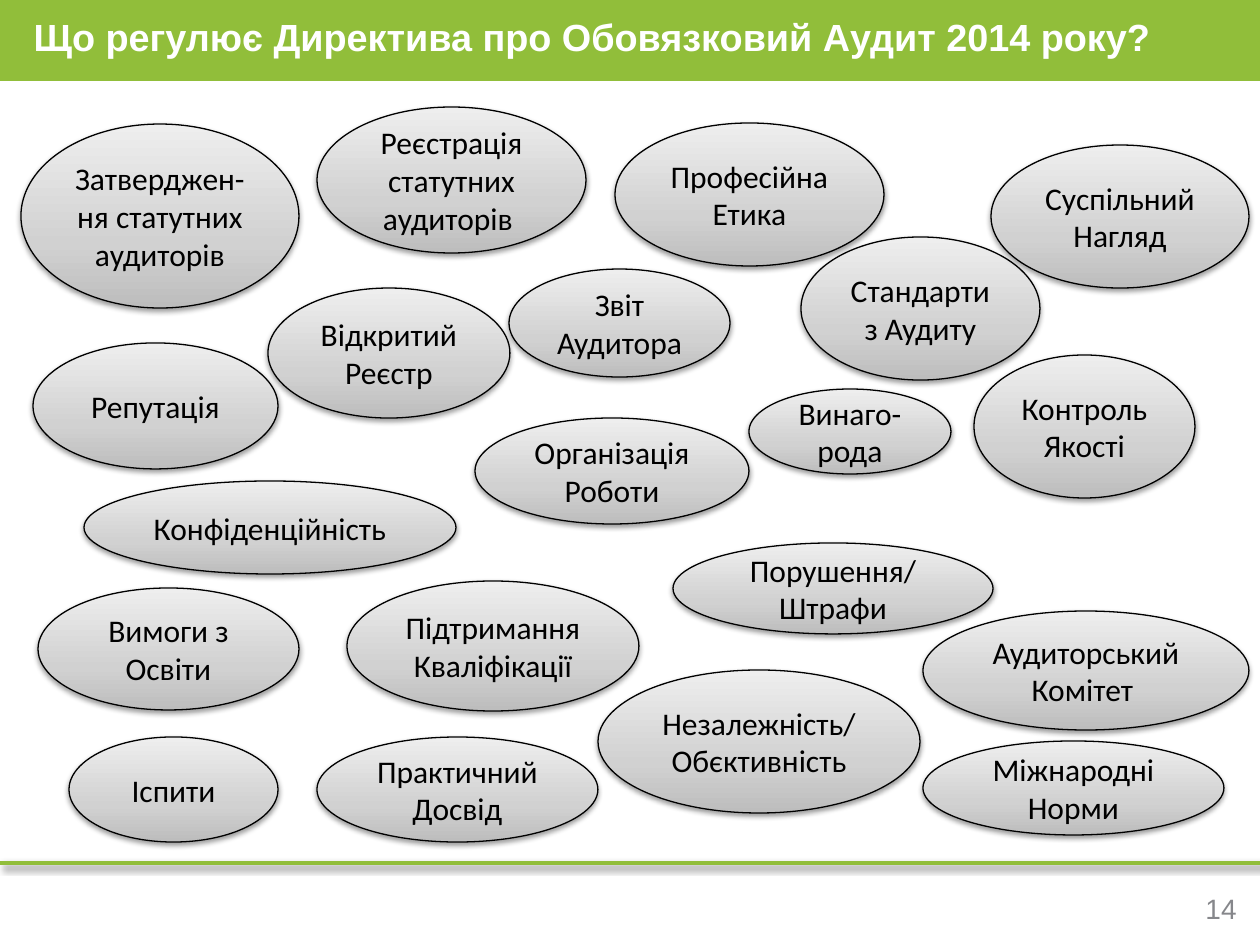
import pptx
import pptx.util
import pptx.dml.color
import pptx.enum.shapes
import pptx.enum.text
import pptx.oxml
import pptx.oxml.ns

PX = 914400 // 126
COLOR = {"green": "91BE3A", "white": "FFFFFF", "black": "000000", "gray": "86878B"}
GRAD = [(0, "BDBDBD"), (35, "D1D1D1"), (100, "EEEEEE")]
TITLE = "Що регулює Директива про Обовязковий Аудит 2014 року?"
NUMBER = "14"
# text, left, top, width, height
TOPICS = [
    ("Затверджен-ня статутних аудиторів", 21, 124, 278, 184),
    ("Вимоги з Освіти", 38, 588, 261, 122),
    ("Репутація", 33, 343, 245, 126),
    ("Іспити", 69, 737, 209, 105),
    ("Практичний Досвід", 317, 737, 281, 105),
    ("Підтримання Кваліфікації", 347, 581, 292, 130),
    ("Відкритий Реєстр", 268, 288, 242, 130),
    ("Реєстрація статутних аудиторів ", 317, 107, 269, 146),
    ("Професійна Етика", 615, 123, 269, 143),
    ("Незалежність/ Обєктивність", 598, 670, 322, 143),
    ("Конфіденційність", 84, 481, 372, 93),
    ("Організація Роботи", 475, 418, 274, 106),
    ("Винаго-рода", 749, 389, 202, 85),
    ("Стандарти з Аудиту", 801, 237, 239, 143),
    ("Звіт Аудитора", 509, 269, 221, 108),
    ("Контроль Якості", 974, 355, 221, 143),
    ("Порушення/ Штрафи", 673, 543, 320, 91),
    ("Суспільний Нагляд", 991, 145, 258, 143),
    ("Аудиторський Комітет ", 923, 611, 326, 119),
    ("Міжнародні Норми", 923, 741, 301, 94),
]

ALIGN = pptx.enum.text.PP_ALIGN
SHAPE = pptx.enum.shapes.MSO_SHAPE
NS = pptx.oxml.ns.nsdecls("a")


def rgb(name):
    return pptx.dml.color.RGBColor.from_string(COLOR[name])


def box(*px):
    return [n * PX for n in px]


def write(shape, text, size, font, color, align, bold=False):
    frame = shape.text_frame
    frame.word_wrap = True
    frame.auto_size = pptx.enum.text.MSO_AUTO_SIZE.NONE
    frame.vertical_anchor = pptx.enum.text.MSO_ANCHOR.MIDDLE
    para = frame.paragraphs[0]
    para.alignment = align
    run = para.add_run()
    run.text = text
    run.font.size = pptx.util.Pt(size)
    run.font.name = font
    run.font.bold = bold
    run.font.color.rgb = rgb(color)


def shade(shape, alpha, blur, dist, angle):
    """Give the shape an outer black shadow; blur and distance in points."""
    shape._element.spPr.append(pptx.oxml.parse_xml(
        f'<a:effectLst {NS}><a:outerShdw blurRad="{int(blur * 12700)}" '
        f'dist="{int(dist * 12700)}" dir="{angle * 60000}" rotWithShape="0">'
        f'<a:srgbClr val="{COLOR["black"]}"><a:alpha val="{alpha * 1000}"/>'
        '</a:srgbClr></a:outerShdw></a:effectLst>'))


def blend(shape):
    """Fill the shape with the grey gradient, dark at the bottom."""
    shape.fill.gradient()
    old = shape._element.spPr.find(pptx.oxml.ns.qn("a:gradFill"))
    stops = "".join(f'<a:gs pos="{pos * 1000}"><a:srgbClr val="{tone}"/></a:gs>'
                    for pos, tone in GRAD)
    new = pptx.oxml.parse_xml(
        f'<a:gradFill {NS} rotWithShape="1"><a:gsLst>{stops}</a:gsLst>'
        '<a:lin ang="16200000" scaled="0"/></a:gradFill>')
    old.getparent().replace(old, new)


def main():
    deck = pptx.Presentation()
    deck.slide_width, deck.slide_height = pptx.util.Inches(10), pptx.util.Inches(7.5)
    slide = deck.slides.add_slide(deck.slide_layouts[5])
    shapes = slide.shapes
    title = shapes.title

    rule = shapes.add_connector(pptx.enum.shapes.MSO_CONNECTOR.STRAIGHT,
                                *box(0, 863, 1260, 863))
    rule.line.color.rgb = rgb("green")
    rule.line.width = pptx.util.Pt(2)
    shade(rule, 40, 4, 3, 45)

    bar = shapes.add_shape(SHAPE.RECTANGLE, *box(0, 0, 1260, 81))
    bar.fill.solid()
    bar.fill.fore_color.rgb = rgb("green")
    bar.line.fill.background()
    bar.shadow.inherit = False

    title.left, title.top, title.width, title.height = box(21, -8, 1186, 88)
    write(title, TITLE, 21.6, "Arial", "white", ALIGN.LEFT, bold=True)
    bar._element.addnext(title._element)

    page = shapes.add_textbox(*box(1174, 883, 75, 50))
    write(page, NUMBER, 16, "Arial", "gray", ALIGN.RIGHT)

    for text, *place in TOPICS:
        oval = shapes.add_shape(SHAPE.OVAL, *box(*place))
        blend(oval)
        oval.line.color.rgb = rgb("black")
        oval.line.width = pptx.util.Pt(0.75)
        shade(oval, 38, 3.1, 1.6, 90)
        write(oval, text, 18, "Calibri", "black", ALIGN.CENTER)

    deck.save("out.pptx")


if __name__ == "__main__":
    main()
